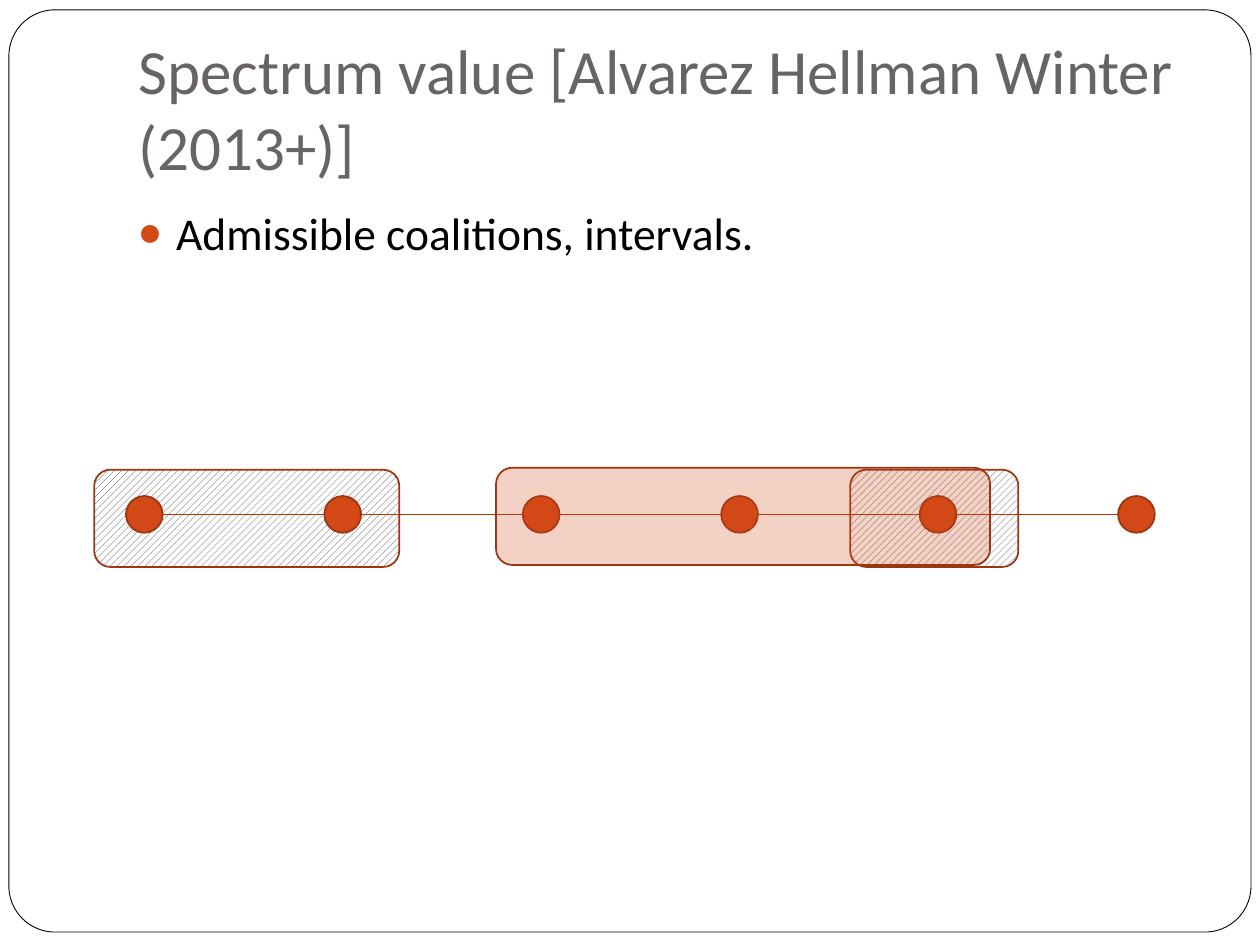
from dataclasses import dataclass

from lxml import etree
from pptx import Presentation
from pptx import util as u
from pptx.dml.color import RGBColor
from pptx.enum import dml, shapes, text
from pptx.oxml import ns


@dataclass(frozen=True)
class Theme:
    font: str = "Calibri"
    title_size: int = 36
    body_size: int = 26
    white: str = "FFFFFF"
    black: str = "000000"
    title: str = "696464"
    hatch: str = "404040"
    accent: str = "D34817"
    outline: str = "9C3511"
    axis: str = "B1360B"


THEME = Theme()
SHAPE = shapes.MSO_SHAPE

PLAYERS = 6
PLAYER_SIZE = 0.74
PLAYER_STEP = 4.0
AXIS_LEFT, AXIS_TOP = 2.54, 10.37
AXIS_RIGHT = AXIS_LEFT + (PLAYERS - 1) * PLAYER_STEP + PLAYER_SIZE
COALITION_HEIGHT = 1.96


def rgb(code):
    return RGBColor.from_string(code)


def add_child(parent, tag, **attributes):
    return etree.SubElement(parent, ns.qn(tag), attributes)


def write(frame, words, *, size, color, margins, anchor):
    """Fill a text frame with one left-aligned paragraph and return it."""
    frame.word_wrap = True
    frame.auto_size = text.MSO_AUTO_SIZE.NONE
    frame.vertical_anchor = anchor
    frame.margin_left, frame.margin_top, frame.margin_right, frame.margin_bottom = map(u.Cm, margins)
    para = frame.paragraphs[0]
    para.alignment = text.PP_ALIGN.LEFT
    span = para.add_run()
    span.text = words
    span.font.name = THEME.font
    span.font.size = u.Pt(size)
    span.font.color.rgb = rgb(color)
    return para


def add_title(page, words):
    title = page.shapes.title
    title.left, title.top, title.width, title.height = map(u.Cm, (2.54, 0.76, 21.59, 3.18))
    write(title.text_frame, words, size=THEME.title_size, color=THEME.title,
          margins=(0.25, 0.13, 0.25, 0.25), anchor=text.MSO_ANCHOR.BOTTOM)


def add_bullet(page, words):
    box = page.shapes.add_textbox(*map(u.Cm, (2.54, 4.01, 21.59, 12.7)))
    para = write(box.text_frame, words, size=THEME.body_size, color=THEME.black,
                 margins=(0.25, 0.13, 0.25, 0.13), anchor=text.MSO_ANCHOR.TOP)
    para.space_before = u.Pt(5.8)
    settings = para._p.get_or_add_pPr()
    settings.set("marL", str(u.Cm(0.76)))
    settings.set("indent", str(-u.Cm(0.76)))
    add_child(add_child(settings, "a:buClr"), "a:srgbClr", val=THEME.accent)
    add_child(settings, "a:buSzPct", val="85000")
    add_child(settings, "a:buFont", typeface=THEME.font)
    add_child(settings, "a:buChar", char="●")


def add_outlined(page, kind, left, top, width, height, *, line=THEME.outline, weight=1):
    shape = page.shapes.add_shape(kind, *map(u.Cm, (left, top, width, height)))
    shape.shadow.inherit = False
    shape.line.color.rgb = rgb(line)
    shape.line.width = u.Pt(weight)
    return shape


def fill_solid(shape, color, opacity=100):
    shape.fill.solid()
    shape.fill.fore_color.rgb = rgb(color)
    if opacity < 100:
        tone = shape.fill._xPr.find(".//" + ns.qn("a:srgbClr"))
        add_child(tone, "a:alpha", val=str(opacity * 1000))


def fill_hatched(shape):
    shape.fill.patterned()
    shape.fill.pattern = dml.MSO_PATTERN.WIDE_UPWARD_DIAGONAL
    shape.fill.fore_color.rgb = rgb(THEME.hatch)
    shape.fill.back_color.rgb = rgb(THEME.white)


def add_frame(page):
    """Add the rounded page border behind the title."""
    frame = add_outlined(page, SHAPE.ROUNDED_RECTANGLE, 0.18, 0.2, 25.04, 18.59,
                         line=THEME.black, weight=0.5)
    frame.adjustments[0] = 0.05
    fill_solid(frame, THEME.white)
    page.shapes.title.element.addprevious(frame.element)


def add_coalition(page, left, top, width):
    return add_outlined(page, SHAPE.ROUNDED_RECTANGLE, left, top, width, COALITION_HEIGHT)


def add_axis(page):
    axis = page.shapes.add_connector(
        shapes.MSO_CONNECTOR.STRAIGHT,
        *map(u.Cm, (AXIS_LEFT, AXIS_TOP, AXIS_RIGHT, AXIS_TOP)))
    axis.line.color.rgb = rgb(THEME.axis)
    axis.line.width = u.Pt(0.75)
    add_child(axis.element.spPr, "a:effectLst")


def add_players(page):
    for index in range(PLAYERS):
        player = add_outlined(page, SHAPE.OVAL, AXIS_LEFT + index * PLAYER_STEP,
                              AXIS_TOP - PLAYER_SIZE / 2, PLAYER_SIZE, PLAYER_SIZE)
        fill_solid(player, THEME.accent)


def main():
    deck = Presentation()
    deck.slide_width, deck.slide_height = u.Cm(25.4), u.Cm(19.05)
    page = deck.slides.add_slide(deck.slide_layouts[5])
    add_frame(page)
    add_title(page, "Spectrum value [Alvarez Hellman Winter (2013+)]")
    add_bullet(page, "Admissible coalitions, intervals.")
    for left, width in ((1.9, 6.15), (17.14, 3.39)):
        fill_hatched(add_coalition(page, left, 9.47, width))
    add_axis(page)
    add_players(page)
    fill_solid(add_coalition(page, 10, 9.43, 9.96), THEME.accent, opacity=25)
    deck.save("out.pptx")


if __name__ == "__main__":
    main()
